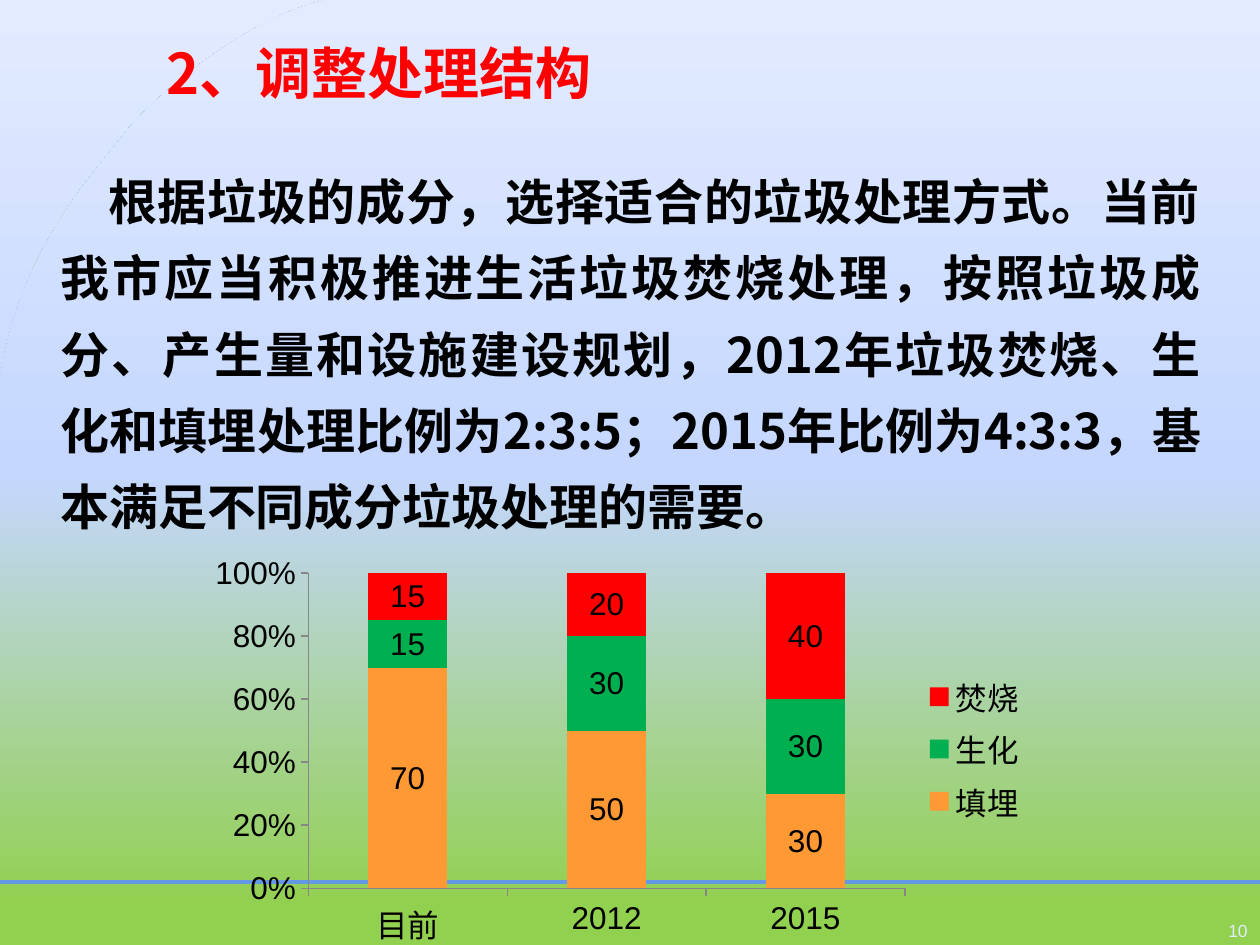
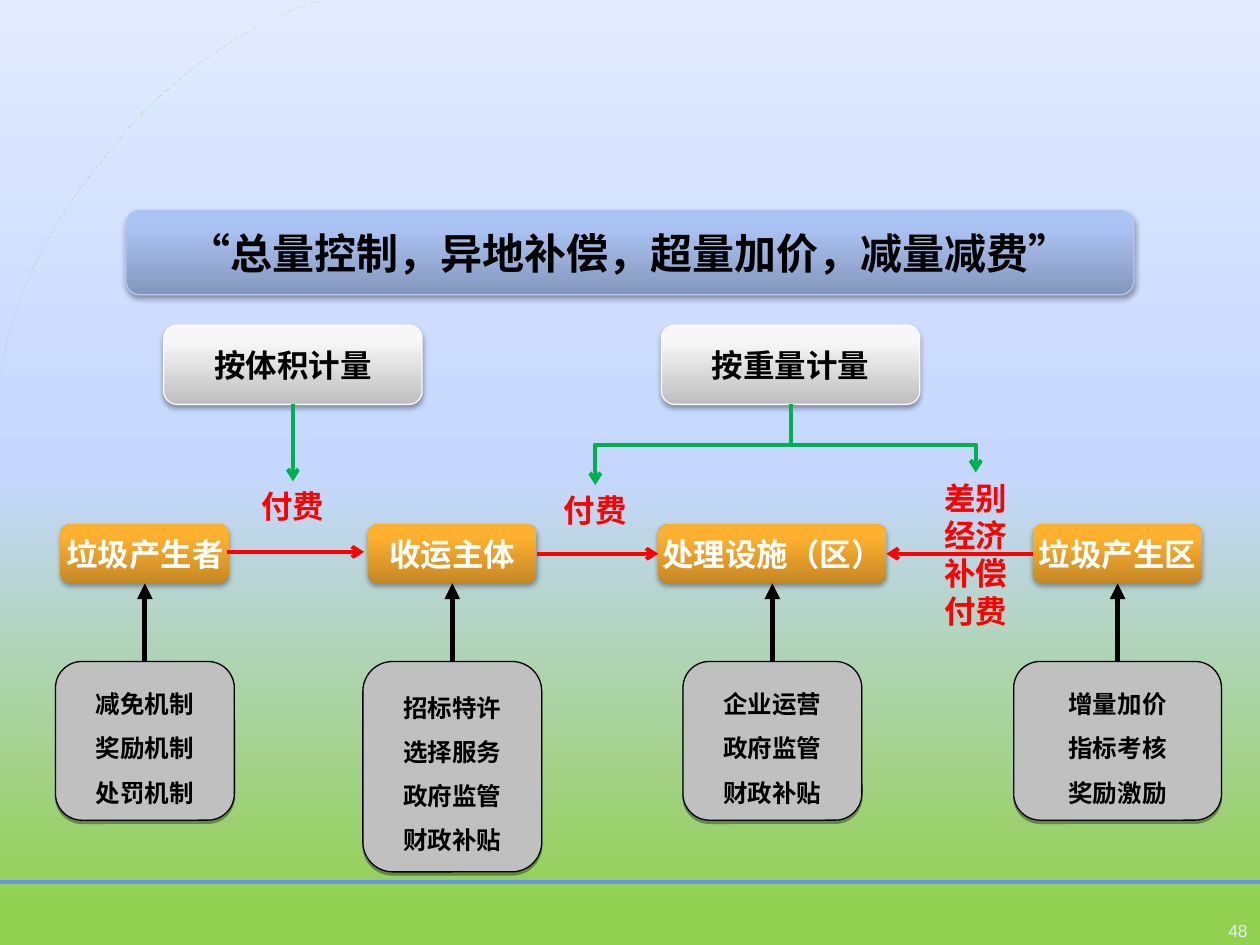
"""Builds two slides on waste treatment: a treatment mix chart and a payment flow diagram."""
from lxml import etree
from pptx import Presentation
from pptx.chart import data
from pptx.dml import color
from pptx.enum import chart as ch, shapes, text
from pptx.oxml import ns
from pptx.util import Inches, Pt

COLORS = {
    "black": "000000", "white": "FFFFFF", "red": "FF0000", "green": "00B050",
    "orange": "FF9933", "grey": "C0C0C0", "rule": "6499E7", "number": "E1EBFB",
    "axis": "878787", "box_edge": "F9F9F9", "banner_edge": "B4C7EE",
}
GRADIENTS = {
    "sky": [(4, "92D050"), (50, "C5D7FF"), (100, "E2EBFF")],
    "amber": [(0, "C58824"), (80, "FFB02F"), (100, "FFB131")],
    "silver": [(0, "BEBEBE"), (80, "F7F7F7"), (100, "F8F8F8")],
    "blue": [(0, "8496BB"), (80, "ABC3F3"), (100, "AAC3F5")],
}
LATIN, CJK = "Arial", "Noto Sans CJK SC"
ARC_START = (2.58, 0)
ARC_CURVES = [
    [(1.9, 0.16), (1.16, 0.83), (0.98, 1.07)],
    [(0.8, 1.32), (0.16, 1.94), (0, 3.01)],
]

TITLE = "2、调整处理结构"
BODY = ("根据垃圾的成分，选择适合的垃圾处理方式。当前我市应当积极推进生活垃圾焚烧处理，"
        "按照垃圾成分、产生量和设施建设规划，2012年垃圾焚烧、生化和填埋处理比例为2:3:5；"
        "2015年比例为4:3:3，基本满足不同成分垃圾处理的需要。")
YEARS = ["目前", "2012", "2015"]
TREATMENTS = [
    ("填埋", (70, 50, 30), "orange"),
    ("生化", (15, 30, 30), "green"),
    ("焚烧", (15, 20, 40), "red"),
]
PLOT_AREA = {"x": 0.13, "y": 0.07, "w": 0.71, "h": 0.77}

BANNER = "“总量控制，异地补偿，超量加价，减量减费”"
METHODS = [("按体积计量", 1.3), ("按重量计量", 5.25)]
ACTORS = [
    ("垃圾产生者", 1.15, 1.34, 1.42, ["减免机制", "奖励机制", "处罚机制"]),
    ("收运主体", 3.59, 1.34, 1.42, ["招标特许", "选择服务", "政府监管", "财政补贴"]),
    ("处理设施（区）", 6.13, 1.81, 1.42, ["企业运营", "政府监管", "财政补贴"]),
    ("垃圾产生区", 8.87, 1.34, 1.65, ["增量加价", "指标考核", "奖励激励"]),
]
FLOWS = [(3, 2), (1, 2)]
COLLECTION_FLOW = ((1.8, 4.38), (2.89, 4.38))
FEES = [
    ("付费", 1.85, 3.82, 0.4),
    ("付费", 4.25, 3.85, 0.4),
    ("差别经济补偿付费", 7.27, 3.75, 1.3),
]
BRANCH_Y = 3.53


def rgb(name):
    return color.RGBColor.from_string(COLORS[name])


def sub(parent, tag, **attrs):
    el = etree.SubElement(parent, ns.qn(tag))
    for key, value in attrs.items():
        el.set(key, str(value))
    return el


def set_gradient(fill, host, name):
    fill.gradient()
    fill.gradient_angle = 90
    stops = host.find(".//" + ns.qn("a:gsLst"))
    for old in list(stops):
        stops.remove(old)
    for pos, value in GRADIENTS[name]:
        sub(sub(stops, "a:gs", pos=pos * 1000), "a:srgbClr", val=value)


def set_shadow(sp, blur):
    sp.shadow.inherit = False
    effects = sp.element.spPr.find(ns.qn("a:effectLst"))
    shadow = sub(effects, "a:outerShdw", blurRad=int(Pt(blur)), dist=int(Pt(1.8)),
                 dir=5400000, algn="ctr", rotWithShape=0)
    sub(sub(shadow, "a:srgbClr", val=COLORS["black"]), "a:alpha", val=35000)


def write(tf, lines, size, fill, font=LATIN, bold=True, spacing=None,
          align=text.PP_ALIGN.CENTER):
    for i, line in enumerate(lines):
        p = tf.add_paragraph() if i else tf.paragraphs[0]
        p.alignment = align
        if spacing:
            p.line_spacing = spacing
        r = p.add_run()
        r.text = line
        r.font.size, r.font.bold, r.font.name = Pt(size), bold, font
        r.font.color.rgb = rgb(fill)
        sub(r.font._element, "a:ea", typeface=CJK)


def add_text(s, at, lines, size, fill, inset=0.1, **style):
    box = s.shapes.add_textbox(*map(Inches, at))
    tf = box.text_frame
    tf.word_wrap = True
    tf.margin_left = tf.margin_right = Inches(inset)
    write(tf, lines, size, fill, **style)
    return box


def add_box(s, at, lines, size, ink, gradient=None, edge=None, blur=3.1, **style):
    sp = s.shapes.add_shape(shapes.MSO_SHAPE.ROUNDED_RECTANGLE, *map(Inches, at))
    if gradient:
        set_gradient(sp.fill, sp.element, gradient)
    else:
        sp.fill.solid()
        sp.fill.fore_color.rgb = rgb("grey")
    if edge:
        sp.line.color.rgb = rgb(edge)
        sp.line.width = Pt(0.75)
    else:
        sp.line.fill.background()
    set_shadow(sp, blur)
    tf = sp.text_frame
    tf.word_wrap = False
    tf.vertical_anchor = text.MSO_ANCHOR.MIDDLE
    write(tf, lines, size, ink, **style)
    return sp


def add_line(s, start, end, ink, width, head=None, kind=shapes.MSO_CONNECTOR.STRAIGHT):
    c = s.shapes.add_connector(kind, *map(Inches, start + end))
    c.line.color.rgb = rgb(ink)
    c.line.width = Pt(width)
    if head:
        sub(c.line._get_or_add_ln(), "a:tailEnd", type=head)
    sub(c.element.spPr, "a:effectLst")
    return c


def join(s, source, side, target, target_side, ink, width, head, **kw):
    c = add_line(s, (0, 0), (1, 1), ink, width, head, **kw)
    c.begin_connect(source, side)
    c.end_connect(target, target_side)
    return c


def add_branch(s, source, target):
    c = join(s, source, 2, target, 0, "green", 2.25, "arrow",
             kind=shapes.MSO_CONNECTOR.ELBOW)
    x1, y1, x2, y2 = c.begin_x, c.begin_y, c.end_x, c.end_y
    drop, span = y2 - y1, abs(x2 - x1)
    c.left, c.top = (x1 + x2 - drop) // 2, (y1 + y2 - span) // 2
    c.width, c.height = drop, span
    rightward = x2 > x1
    xfrm = c.element.spPr.find(ns.qn("a:xfrm"))
    xfrm.set("rot", "16200000" if rightward else "5400000")
    xfrm.set("flipH", "1" if rightward else "0")
    xfrm.set("flipV", "0")
    geom = c.element.spPr.find(ns.qn("a:prstGeom"))
    guides = geom.find(ns.qn("a:avLst"))
    if guides is None:
        guides = sub(geom, "a:avLst")
    bend = round((Inches(BRANCH_Y) - y1) / drop * 100000)
    sub(guides, "a:gd", name="adj1", fmla=f"val {bend}")


def arc_points(steps=16):
    start, points = ARC_START, []
    for a, b, end in ARC_CURVES:
        for i in range(1, steps + 1):
            t = i / steps
            u = 1 - t
            points.append(tuple(
                u ** 3 * p0 + 3 * u * u * t * p1 + 3 * u * t * t * p2 + t ** 3 * p3
                for p0, p1, p2, p3 in zip(start, a, b, end)))
        start = end
    return points


def new_slide(prs, layout, number):
    s = prs.slides.add_slide(prs.slide_layouts[layout])
    set_gradient(s.background.fill, s.element, "sky")
    builder = s.shapes.build_freeform(*map(Inches, ARC_START))
    outline = arc_points() + [(0, 7.5), (10, 7.5), (10, 0)]
    builder.add_line_segments([tuple(map(Inches, pt)) for pt in outline], close=True)
    backdrop = builder.convert_to_shape()
    set_gradient(backdrop.fill, backdrop.element, "sky")
    backdrop.line.fill.background()
    backdrop.shadow.inherit = False
    backdrop.element.getparent().insert(2, backdrop.element)
    add_line(s, (0, 7), (10, 7), "rule", 2.25)
    add_text(s, (9.58, 7.25, 0.42, 0.25), [number], 10, "number", bold=False,
             align=text.PP_ALIGN.RIGHT)
    return s


def add_mix_chart(s):
    cd = data.CategoryChartData()
    cd.categories = YEARS
    for name, values, _ in TREATMENTS:
        cd.add_series(name, values)
    chart = s.shapes.add_chart(ch.XL_CHART_TYPE.COLUMN_STACKED_100,
                               *map(Inches, (1.58, 4.32, 6.67, 3.25)), cd).chart
    chart.has_title = False
    chart.font.name, chart.font.size = LATIN, Pt(18)
    chart.font.color.rgb = rgb("black")
    chart.has_legend = True
    chart.legend.position = ch.XL_LEGEND_POSITION.RIGHT
    chart.legend.include_in_layout = False
    plot = chart.plots[0]
    plot.gap_width, plot.overlap, plot.vary_by_categories = 150, 100, False
    for series, (_, _, ink) in zip(plot.series, TREATMENTS):
        series.format.fill.solid()
        series.format.fill.fore_color.rgb = rgb(ink)
        series.data_labels.show_value = True
    for axis in (chart.category_axis, chart.value_axis):
        axis.has_major_gridlines = False
        axis.major_tick_mark = ch.XL_TICK_MARK.OUTSIDE
        axis.format.line.color.rgb = rgb("axis")
    chart.value_axis.major_unit = 0.2
    chart.value_axis.maximum_scale = 1
    chart.value_axis.tick_labels.number_format = "0%"
    chart.value_axis.tick_labels.number_format_is_linked = False

    area = chart._chartSpace.find(".//" + ns.qn("c:plotArea"))
    for old in area.findall(ns.qn("c:layout")):
        area.remove(old)
    layout = sub(area, "c:layout")
    area.insert(0, layout)
    manual = sub(layout, "c:manualLayout")
    sub(manual, "c:layoutTarget", val="inner")
    for key in "xy":
        sub(manual, f"c:{key}Mode", val="edge")
    for key, value in PLOT_AREA.items():
        sub(manual, f"c:{key}", val=value)


def build_mix_slide(prs):
    s = new_slide(prs, 5, "10")
    body = add_text(s, (0.38, 1.17, 9.25, 3.17), [BODY], 28, "black", font=CJK,
                    spacing=1.3, align=text.PP_ALIGN.JUSTIFY)
    props = body.text_frame.paragraphs[0]._p.get_or_add_pPr()
    props.set("indent", str(Inches(0.38)))
    props.set("hangingPunct", "0")
    title = s.shapes.title
    title.left, title.top, title.width, title.height = map(Inches, (1.22, 0.25, 8.78, 0.64))
    title.text_frame.vertical_anchor = text.MSO_ANCHOR.MIDDLE
    title.text_frame.auto_size = text.MSO_AUTO_SIZE.NONE
    write(title.text_frame, [TITLE], 32, "red", font=CJK, align=text.PP_ALIGN.LEFT)
    add_mix_chart(s)


def build_payment_slide(prs):
    s = new_slide(prs, 6, "48")
    actors, measures = [], []
    for name, center, width, measure_width, lines in ACTORS:
        actors.append(add_box(s, (center - width / 2, 4.16, width, 0.47), [name], 18,
                              "white", gradient="amber"))
        height = 1.26 if len(lines) == 3 else 1.67
        measures.append(add_box(
            s, (center - measure_width / 2, 5.25, measure_width, height), lines, 14,
            "black", edge="black", blur=0, spacing=1.5))
    volume, weight = [
        add_box(s, (x, 2.58, 2.05, 0.63), [name], 18, "black", gradient="silver",
                edge="box_edge") for name, x in METHODS]
    fees = [add_text(s, (x, y, 0.95, h), [name], 18, "red", inset=0.15)
            for name, x, y, h in FEES]
    add_box(s, (1, 1.67, 8, 0.67), [BANNER], 24, "black", gradient="blue",
            edge="banner_edge", font=CJK)

    join(s, volume, 2, fees[0], 0, "green", 2.25, "arrow")
    for fee in (fees[2], fees[1]):
        add_branch(s, weight, fee)
    for payer, payee in FLOWS:
        sides = (3, 1) if payer < payee else (1, 3)
        join(s, actors[payer], sides[0], actors[payee], sides[1], "red", 2.25, "arrow")
    add_line(s, *COLLECTION_FLOW, "red", 2.25, "arrow")
    for measure, actor in zip(measures, actors):
        join(s, measure, 0, actor, 2, "black", 3, "triangle")


def main():
    prs = Presentation()
    prs.slide_width, prs.slide_height = Inches(10), Inches(7.5)
    build_mix_slide(prs)
    build_payment_slide(prs)
    prs.save("out.pptx")


if __name__ == "__main__":
    main()
